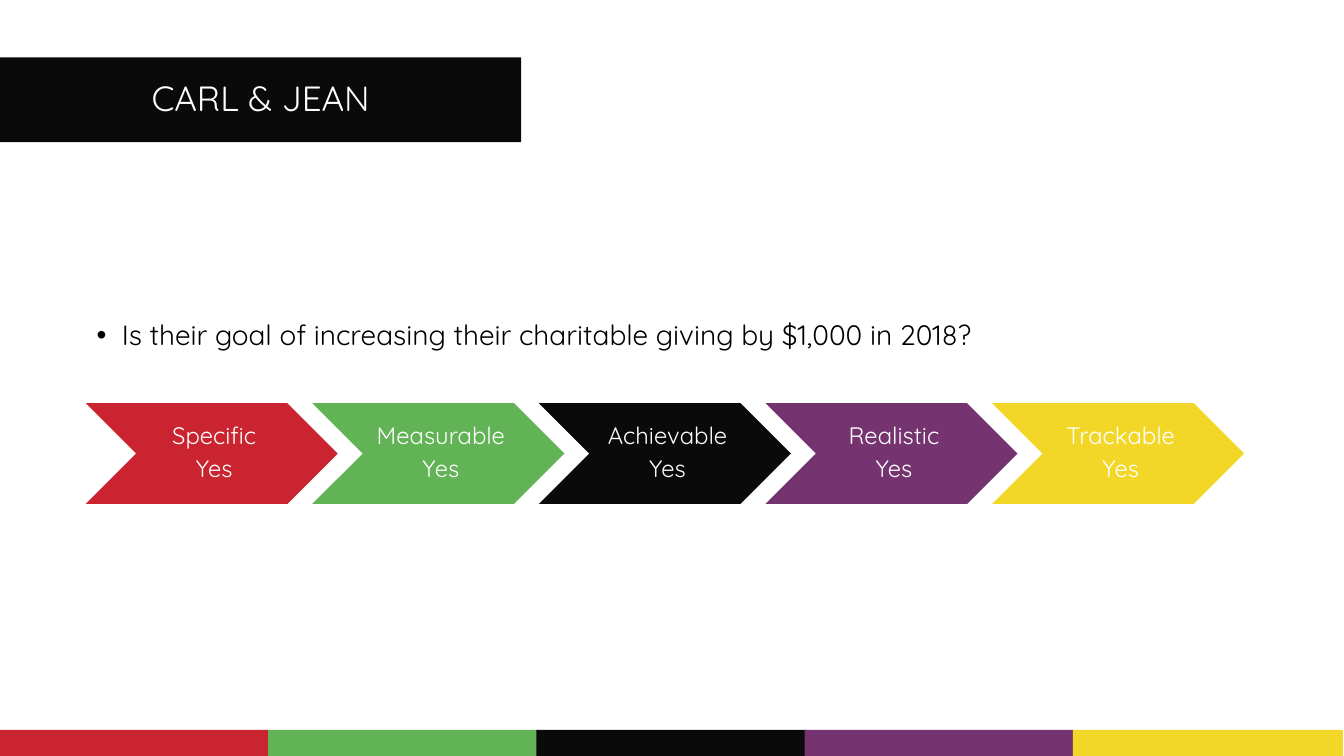
from pptx import Presentation
from pptx.dml.color import RGBColor
from pptx.enum.shapes import MSO_SHAPE
from pptx.enum.text import MSO_ANCHOR, PP_ALIGN
from pptx.oxml import parse_xml
from pptx.oxml.ns import nsdecls
from pptx.util import Inches, Pt

TITLE = "CARL & JEAN"
QUESTION = "Is their goal of increasing their charitable giving by $1,000 in 2018?"
CRITERIA = [
    ("Specific", "Yes", "CA2430"),
    ("Measurable", "Yes", "61B355"),
    ("Achievable", "Yes", "0A0A0A"),
    ("Realistic", "Yes", "753470"),
    ("Trackable", "Yes", "F2D728"),
]
FONT, BLACK, WHITE = "Quicksand", "0A0A0A", "FFFFFF"
STRIPE_TOP, STRIPE_WIDTH, STRIPE_HEIGHT, STRIPE_STEP = 7.24, 2.68, 0.26, 2.66
STEP_LEFT, STEP_TOP, STEP_WIDTH, STEP_HEIGHT = 0.85, 4, 2.5, 1
STEP_PITCH = 2.2475


def color(value):
    return RGBColor.from_string(value)


def add_block(kind, left, top, width, height, fill):
    block = slide.shapes.add_shape(
        kind, Inches(left), Inches(top), Inches(width), Inches(height))
    block.shadow.inherit = False
    block.fill.solid()
    block.fill.fore_color.rgb = color(fill)
    block.line.fill.background()
    return block


def write(shape, *lines, size, ink=WHITE, align=PP_ALIGN.CENTER, spacing=1.0,
          gap=0, anchor=MSO_ANCHOR.MIDDLE, insets=(0.1, 0.05, 0.1, 0.05),
          bullet=None):
    frame = shape.text_frame
    frame.word_wrap = True
    frame.vertical_anchor = anchor
    (frame.margin_left, frame.margin_top,
     frame.margin_right, frame.margin_bottom) = map(Inches, insets)
    for index, line in enumerate(lines):
        paragraph = frame.add_paragraph() if index else frame.paragraphs[0]
        paragraph.alignment = align
        paragraph.line_spacing = spacing
        if index:
            paragraph.space_before = Pt(gap)
        if bullet:
            properties = paragraph._p.get_or_add_pPr()
            properties.set("marL", str(Inches(0.25)))
            properties.set("indent", str(Inches(-0.25)))
            properties.append(parse_xml(
                f'<a:buFont {nsdecls("a")} typeface="Arial"/>'))
            properties.append(parse_xml(
                f'<a:buChar {nsdecls("a")} char="{bullet}"/>'))
        run = paragraph.add_run()
        run.text = line
        run.font.name = FONT
        run.font.size = Pt(size)
        run.font.color.rgb = color(ink)


presentation = Presentation()
presentation.slide_width = Inches(13.33)
presentation.slide_height = Inches(7.5)
slide = presentation.slides.add_slide(presentation.slide_layouts[6])

for index, (criterion, answer, fill) in enumerate(CRITERIA):
    add_block(MSO_SHAPE.RECTANGLE, index * STRIPE_STEP, STRIPE_TOP,
              STRIPE_WIDTH, STRIPE_HEIGHT, fill)

title_bar = add_block(MSO_SHAPE.RECTANGLE, 0, 0.57, 5.17, 0.84, BLACK)
write(title_bar, TITLE, size=25, insets=(0.1, 0.05, 0.1, 0.09))

for index, (criterion, answer, fill) in enumerate(CRITERIA):
    step = add_block(MSO_SHAPE.CHEVRON, STEP_LEFT + index * STEP_PITCH,
                     STEP_TOP, STEP_WIDTH, STEP_HEIGHT, fill)
    write(step, criterion, answer, size=17, spacing=0.9, gap=5.2,
          insets=(0.07, 0.02, 0.02, 0.02))

question = slide.shapes.add_textbox(
    Inches(0.86), Inches(3.14), Inches(11.5), Inches(0.45))
write(question, QUESTION, size=20, ink="000000", align=PP_ALIGN.LEFT,
      spacing=0.9, anchor=MSO_ANCHOR.TOP, bullet="•")

presentation.save("out.pptx")
